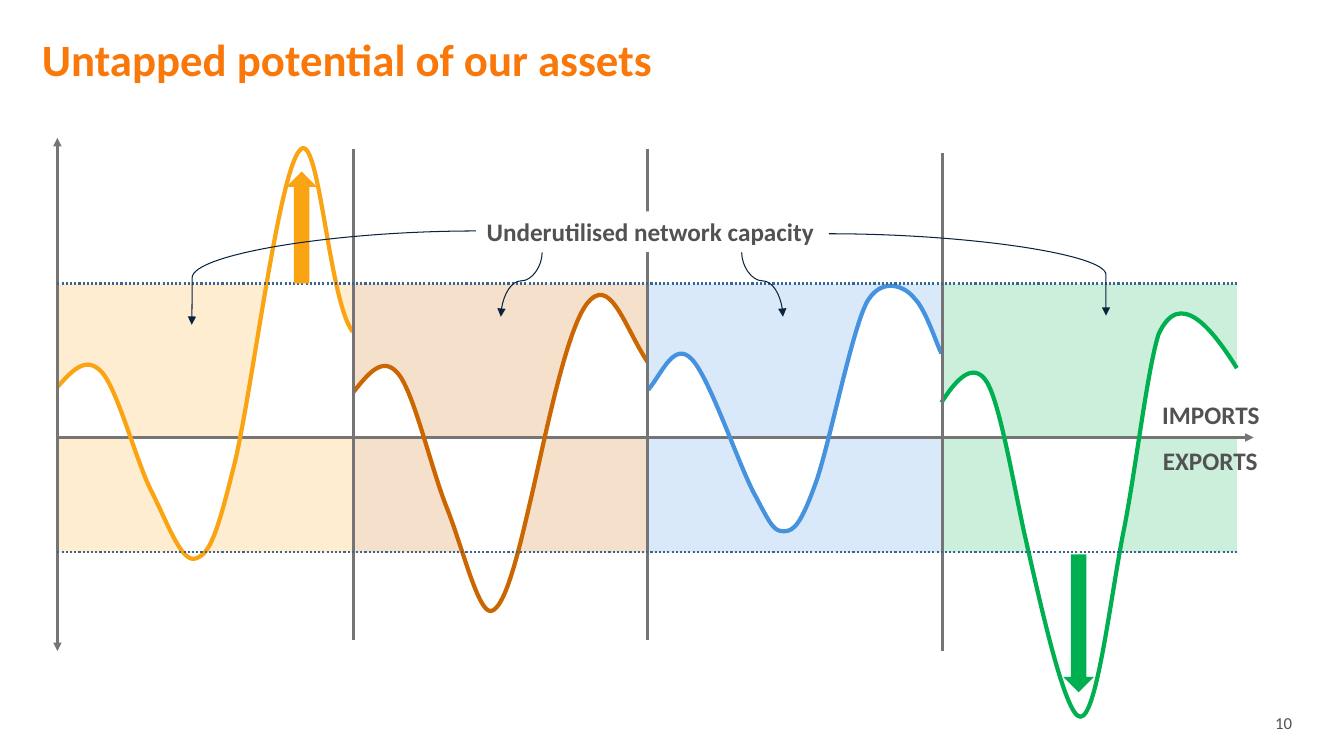
"""Build the slide on untapped network capacity."""
import pptx
import pptx.dml.color
import pptx.enum.dml
import pptx.enum.shapes
import pptx.enum.text
import pptx.oxml
import pptx.oxml.ns
import pptx.util

Pt = pptx.util.Pt
qn = pptx.oxml.ns.qn
NS = pptx.oxml.ns.nsdecls("a")
SHAPE = pptx.enum.shapes.MSO_SHAPE
CONNECTOR = pptx.enum.shapes.MSO_CONNECTOR
ALIGN = pptx.enum.text.PP_ALIGN

COLORS = {
    "title": "FA780A", "text": "525252", "axis": "757575", "limit": "396691",
    "pointer": "09243F", "white": "FFFFFF",
    "yellow": "FAA414", "brown": "CC6600", "blue": "4592DF", "green": "00B050",
    "yellow band": "FEEDD0", "brown band": "F5E0CC",
    "blue band": "DAE9F9", "green band": "CCEFDC",
}
FONT = "Calibri"
TITLE = "Untapped potential of our assets"
CAPACITY = "Underutilised network capacity"
TOP, AXIS, BOTTOM = 202.5, 312.5, 394.5
LEFT, RIGHT = 41, 884

LOADS = {
    "yellow": [(41, 276.5), (51, 265.5), (61, 253.5), (72.5, 265.5),
               (84, 278), (97, 328.5), (108, 350.5),
               (119.5, 373), (129.5, 402), (139.5, 399),
               (150, 396), (155, 381.5), (167, 333.5),
               (179.5, 284.5), (198.5, 125.5), (214, 107.5),
               (228, 90), (234.5, 214.5), (252, 237)],
    "brown": [(252.5, 280), (263, 267), (273.5, 253.5), (284.5, 267),
              (296, 281), (308, 335), (319.5, 363.5),
              (330.5, 391.5), (341.5, 437), (350.5, 436.5),
              (360.5, 435.5), (370, 396.5), (378.5, 359.5),
              (387.5, 322), (403, 240), (418.5, 218),
              (435.5, 194.5), (445.5, 232.5), (462.5, 258.5)],
    "blue": [(463, 278.5), (473, 266.5), (481.5, 243.5), (494, 256.5),
             (507, 269.5), (528.5, 335), (540, 355),
             (551, 376), (553, 379.5), (560, 379.5),
             (567.5, 379.5), (572.5, 373), (582.5, 345.5),
             (592.5, 318), (609, 232.5), (620, 214.5),
             (631.5, 196.5), (648, 206), (653, 213),
             (661.5, 221), (669.5, 247.5), (672.5, 252.5)],
    "green": [(672.5, 287.5), (682.5, 272), (695, 257), (705, 273),
              (714, 288), (723, 340), (731.5, 380),
              (741, 421), (760.5, 513.5), (772, 512),
              (784, 511), (794, 420.5), (803.5, 375),
              (812, 330), (819.5, 265), (827.5, 239),
              (842.5, 205), (866, 235), (883.5, 263)],
}
DIVIDERS = [(673, 109.5, 465), (462.5, 106.5, 457), (252.5, 106.5, 457)]
ARROWS = [(SHAPE.UP_ARROW, "yellow", 204.5, 122.5, 22, 80),
          (SHAPE.DOWN_ARROW, "green", 759.5, 396, 22, 98.5)]
POINTERS = [((340, 165), (137, 232), 99900, 0),
            ((592, 167), (790, 225.5), 100000, 0),
            ((349.5, 188.5), (395.5, 218), 44200, 90),
            ((567.5, 188.5), (521.5, 218), 44200, 270)]
LABELS = [("IMPORTS", 822, 281.5, 86, 29, 18, True, ALIGN.CENTER),
          ("EXPORTS", 821.5, 314.5, 86, 29, 18, True, ALIGN.CENTER),
          ("10", 890, 505.5, 40, 29, 12, False, ALIGN.RIGHT)]


def rgb(name):
    return pptx.dml.color.RGBColor.from_string(COLORS[name])


def sample(points, steps=4):
    out = [points[0]]
    for i in range(0, len(points) - 1, 3):
        a, b, c, d = points[i:i + 4]
        for n in range(1, steps + 1):
            t = n / steps
            u = 1 - t
            out.append(tuple(u**3 * a[k] + 3 * u * u * t * b[k]
                             + 3 * u * t * t * c[k] + t**3 * d[k] for k in (0, 1)))
    return out


def clip(curve, high, low):
    pts = [curve[0]]
    for (x1, y1), (x2, y2) in zip(curve, curve[1:]):
        cuts = [(x1 + (x2 - x1) * (y - y1) / (y2 - y1), y)
                for y in (high, low) if (y - y1) * (y - y2) < 0]
        pts += sorted(cuts) + [(x2, y2)]
    pts = [(x, min(max(y, high), low)) for x, y in pts]
    inner = [b for a, b, c in zip(pts, pts[1:], pts[2:]) if not a[1] == b[1] == c[1]]
    return [pts[0], *inner, pts[-1]]


def add_outline(shapes, points, closed):
    pts = [(Pt(x), Pt(y)) for x, y in points]
    builder = shapes.build_freeform(*pts[0])
    builder.add_line_segments(pts[1:], close=closed)
    sp = builder.convert_to_shape()
    sp.shadow.inherit = False
    return sp


def add_band(shapes, curve, color, high, low, edge):
    pts = [(curve[0][0], edge), *clip(curve, high, low), (curve[-1][0], edge)]
    fill(add_outline(shapes, pts, True), color)


def add_load(shapes, points, color):
    sp = add_outline(shapes, points[::3], False)
    segments = list(sp._element.spPr.iter(qn("a:lnTo")))
    for n, segment in enumerate(segments):
        trio = points[3 * n + 1:3 * n + 4]
        pts = "".join(f'<a:pt x="{Pt(x) - sp.left}" y="{Pt(y) - sp.top}"/>'
                      for x, y in trio)
        segment.getparent().replace(segment, pptx.oxml.parse_xml(
            f"<a:cubicBezTo {NS}>{pts}</a:cubicBezTo>"))
    sp.fill.background()
    sp.line.color.rgb = rgb(color)
    sp.line.width = Pt(3)


def fill(sp, color):
    sp.shadow.inherit = False
    sp.fill.solid()
    sp.fill.fore_color.rgb = rgb(color)
    sp.line.fill.background()


def add_line(shapes, start, end, color, width, ends=(), kind=CONNECTOR.STRAIGHT):
    sp = shapes.add_connector(kind, *(Pt(v) for v in (*start, *end)))
    sp.line.color.rgb = rgb(color)
    sp.line.width = Pt(width)
    ln = sp._element.spPr.find(qn("a:ln"))
    for tag in ends:
        ln.append(pptx.oxml.parse_xml(f'<a:{tag} {NS} type="triangle"/>'))
    sp._element.spPr.append(pptx.oxml.parse_xml(f"<a:effectLst {NS}/>"))
    return sp


def add_pointer(shapes, start, end, bend, turn):
    sp = add_line(shapes, start, end, "pointer", 0.75, ["tailEnd"], CONNECTOR.CURVE)
    spPr = sp._element.spPr
    spPr.find(qn("a:xfrm")).set("rot", str(turn * 60000))
    spPr.find(qn("a:prstGeom")).find(qn("a:avLst")).append(pptx.oxml.parse_xml(
        f'<a:gd {NS} name="adj1" fmla="val {bend}"/>'))


def write(sp, text, size, color, bold, align):
    tf = sp.text_frame
    tf.word_wrap = True
    tf.auto_size = pptx.enum.text.MSO_AUTO_SIZE.NONE
    tf.vertical_anchor = pptx.enum.text.MSO_ANCHOR.TOP
    p = tf.paragraphs[0]
    p.text = text
    p.alignment = align
    p.font.name, p.font.size, p.font.bold = FONT, Pt(size), bold
    p.font.color.rgb = rgb(color)
    return tf


def main():
    prs = pptx.Presentation()
    prs.slide_width, prs.slide_height = Pt(960), Pt(540)
    shapes = prs.slides.add_slide(prs.slide_layouts[5]).shapes

    title = shapes.title
    title.left, title.top, title.width, title.height = Pt(30), Pt(30), Pt(900), Pt(39)
    tf = write(title, TITLE, 32, "title", True, ALIGN.LEFT)
    tf.margin_left = tf.margin_right = tf.margin_top = tf.margin_bottom = 0
    tf.paragraphs[0].line_spacing = Pt(31)

    for name, points in LOADS.items():
        curve = sample(points)
        add_band(shapes, curve, f"{name} band", TOP, AXIS, TOP)
        add_band(shapes, curve, f"{name} band", AXIS, BOTTOM, BOTTOM)
    add_line(shapes, (LEFT, AXIS), (895.5, AXIS), "axis", 2, ["tailEnd"])
    for name, points in LOADS.items():
        add_load(shapes, points, name)

    for x, y1, y2 in DIVIDERS:
        add_line(shapes, (x, y1), (x, y2), "axis", 2)
    add_line(shapes, (LEFT, 98.5), (LEFT, 465), "axis", 2, ["headEnd", "tailEnd"])
    for y in (TOP, BOTTOM):
        sp = add_line(shapes, (LEFT, y), (RIGHT, y), "limit", 1.5)
        sp.line.dash_style = pptx.enum.dml.MSO_LINE.ROUND_DOT

    for kind, color, *box in ARROWS:
        fill(shapes.add_shape(kind, *(Pt(v) for v in box)), color)
    sp = shapes.add_shape(SHAPE.RECTANGLE, Pt(340.5), Pt(151), Pt(254), Pt(29))
    fill(sp, "white")
    write(sp, CAPACITY, 18, "text", True, ALIGN.LEFT)
    for pointer in POINTERS:
        add_pointer(shapes, *pointer)
    for text, x, y, w, h, *style in LABELS:
        sp = shapes.add_textbox(Pt(x), Pt(y), Pt(w), Pt(h))
        size, bold, align = style
        write(sp, text, size, "text", bold, align)
    prs.save("out.pptx")


if __name__ == "__main__":
    main()
